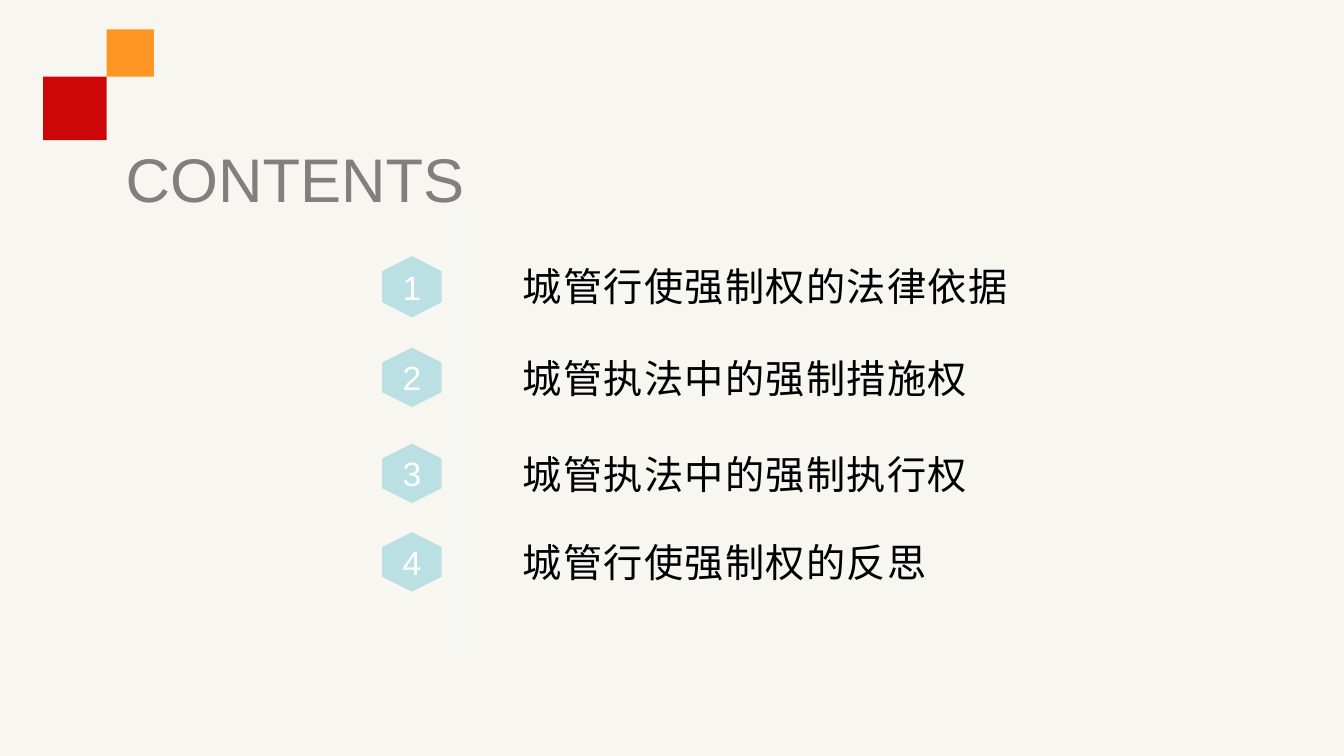
import pptx
import pptx.dml.color
import pptx.enum.lang
import pptx.enum.shapes
import pptx.enum.text
import pptx.oxml.ns
import pptx.util
import lxml.etree

Cm = pptx.util.Cm
Pt = pptx.util.Pt
RGBColor = pptx.dml.color.RGBColor
PP_ALIGN = pptx.enum.text.PP_ALIGN

CREAM = RGBColor(0xF8, 0xF6, 0xF1)
RED = RGBColor(0xCD, 0x07, 0x07)
ORANGE = RGBColor(0xFF, 0x95, 0x23)
PALE = RGBColor(0xF1, 0xF9, 0xF9)
TEAL = RGBColor(0xBB, 0xE0, 0xE3)
GREY = RGBColor(0x80, 0x80, 0x80)
BLACK = RGBColor(0, 0, 0)
WHITE = RGBColor(0xFF, 0xFF, 0xFF)

ENTRIES = [
    ("城管行使强制权的法律依据", 6.45, 1.55),
    ("城管执法中的强制措施权", 8.76, 1.5),
    ("城管执法中的强制执行权", 11.18, 1.5),
    ("城管行使强制权的反思", 13.41, 1.5),
]


def write(sp, text, size, color, frame=None, para=None):
    tf = sp.text_frame
    frame_format = {"word_wrap": True, "vertical_anchor": pptx.enum.text.MSO_ANCHOR.MIDDLE}
    p = tf.paragraphs[0]
    r = p.add_run()
    r.text = text
    font_format = {"name": "Arial", "size": Pt(size)}
    for target, values in ((tf, {**frame_format, **(frame or {})}),
                           (p, para or {}), (r.font, font_format)):
        for name, value in values.items():
            setattr(target, name, value)
    r.font.color.rgb = color
    return r


def paint(sp, color):
    sp.shadow.inherit = False
    sp.fill.solid()
    sp.fill.fore_color.rgb = color
    sp.line.fill.background()


def add_corner_squares(s, left, top):
    red, orange = 1.6, 1.19
    for x, y, side, color in ((left, top + orange, red, RED),
                              (left + red, top, orange, ORANGE)):
        sp = s.shapes.add_shape(pptx.enum.shapes.MSO_SHAPE.RECTANGLE,
                                Cm(x), Cm(y), Cm(side), Cm(side))
        paint(sp, color)


def add_title(s, left, top, width, height):
    sp = s.shapes.add_textbox(Cm(left), Cm(top), Cm(width), Cm(height))
    write(sp, "CONTENTS", 44, GREY, para={"line_spacing": 0.9})


def add_divider(s, x, top, bottom):
    line = s.shapes.add_connector(pptx.enum.shapes.MSO_CONNECTOR.STRAIGHT,
                                  Cm(x), Cm(top), Cm(x), Cm(bottom))
    line.line.color.rgb = PALE
    line.line.width = Pt(2)
    lxml.etree.SubElement(line._element.spPr, pptx.oxml.ns.qn("a:effectLst"))


def add_badge(s, left, top, width, height, number):
    corners = [(0.5, 0), (1, 0.25), (1, 0.75), (0.5, 1), (0, 0.75), (0, 0.25)]
    points = [(Cm(left + width * x), Cm(top + height * y)) for x, y in corners]
    builder = s.shapes.build_freeform(*points[0])
    builder.add_line_segments(points[1:], close=True)
    sp = builder.convert_to_shape()
    paint(sp, TEAL)
    write(sp, str(number), 24, WHITE, para={"alignment": PP_ALIGN.CENTER})


def add_entry(s, left, top, height, number, text):
    add_badge(s, left, top, 1.5, height, number)
    sp = s.shapes.add_textbox(Cm(left + 3.04), Cm(top), Cm(13.54), Cm(1.5))
    r = write(sp, text, 28, BLACK, frame={"margin_left": Cm(0.5)})
    r.font.language_id = pptx.enum.lang.MSO_LANGUAGE_ID.SIMPLIFIED_CHINESE
    r.font._element.set("spc", "100")


def build_contents(prs):
    s = prs.slides.add_slide(prs.slide_layouts[6])
    s.background.fill.solid()
    s.background.fill.fore_color.rgb = CREAM
    add_corner_squares(s, 1.09, 0.74)
    add_divider(s, 11.68, 5.28, 16.59)
    for number, (text, top, height) in enumerate(ENTRIES, 1):
        add_entry(s, 9.63, top, height, number, text)
    add_title(s, 2.92, 3.12, 28.63, 2.95)


def main():
    prs = pptx.Presentation()
    prs.slide_width = Cm(33.87)
    prs.slide_height = Cm(19.05)
    build_contents(prs)
    prs.save("out.pptx")


if __name__ == "__main__":
    main()
